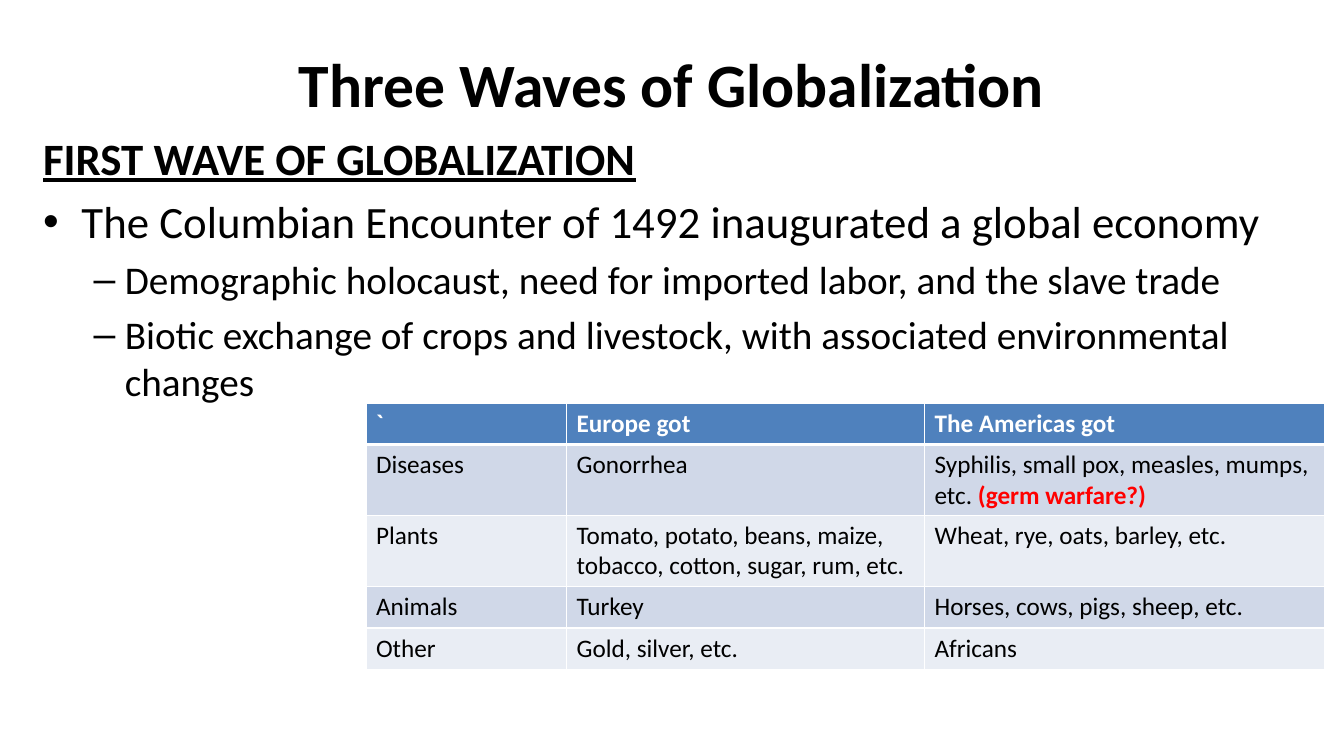
import pptx
import pptx.util
import pptx.dml.color
import pptx.enum.text
import pptx.oxml.ns
from lxml import etree

Inches = pptx.util.Inches
Pt = pptx.util.Pt
FONT = "Calibri"
COLORS = {"black": "000000", "white": "FFFFFF", "red": "FF0000",
          "head": "4F81BD", "dark": "D0D8E8", "light": "E9EDF4"}

# Text, level, bullet, left margin, hanging indent, size
POINTS = [
    ("FIRST WAVE OF GLOBALIZATION", 0, None, 0, 0, 32),
    ("The Columbian Encounter of 1492 inaugurated a global economy",
     0, "•", 0.38, 0.38, 32),
    ("Demographic holocaust, need for imported labor, and the slave trade",
     1, "–", 0.81, 0.31, 28),
    ("Biotic exchange of crops and livestock, with associated environmental changes",
     1, "–", 0.81, 0.31, 28),
]
WIDTHS = [1.99, 3.55, 3.97]
HEIGHTS = [0.41, 0.7, 0.71, 0.41, 0.41]
TRADE = [
    ["`", "Europe got", "The Americas got"],
    ["Diseases", "Gonorrhea", "Syphilis, small pox, measles, mumps, etc. "],
    ["Plants", "Tomato, potato, beans, maize, tobacco, cotton, sugar, rum, etc.",
     "Wheat, rye, oats, barley, etc."],
    ["Animals", "Turkey", "Horses, cows, pigs, sheep, etc."],
    ["Other", "Gold, silver, etc.", "Africans"],
]
GERM = "(germ warfare?)"


def color(name):
    return pptx.dml.color.RGBColor.from_string(COLORS[name])


def add_run(para, text, size, bold=False, tone="black"):
    run = para.add_run()
    run.text = text
    run.font.name = FONT
    run.font.size = Pt(size)
    run.font.bold = bold
    run.font.color.rgb = color(tone)
    return run


def add_frame(slide, box):
    frame = slide.shapes.add_textbox(*map(Inches, box)).text_frame
    frame.word_wrap = True
    return frame


def add_node(parent, tag, **attrs):
    return etree.SubElement(parent, pptx.oxml.ns.qn(tag), **attrs)


def add_title(slide, box):
    frame = add_frame(slide, box)
    frame.vertical_anchor = pptx.enum.text.MSO_ANCHOR.MIDDLE
    para = frame.paragraphs[0]
    para.alignment = pptx.enum.text.PP_ALIGN.CENTER
    add_run(para, "Three Waves of Globalization", 44, True)


def add_points(slide, box):
    frame = add_frame(slide, box)
    frame.margin_right = frame.margin_bottom = 0
    for i, (text, level, mark, left, hang, size) in enumerate(POINTS):
        para = frame.add_paragraph() if i else frame.paragraphs[0]
        para.level = level
        if mark:
            props = para._p.get_or_add_pPr()
            props.set("marL", str(Inches(left)))
            props.set("indent", str(-Inches(hang)))
            add_node(props, "a:buFont", typeface="Arial")
            add_node(props, "a:buChar", char=mark)
        para.space_before = Pt(0.2 * size if i else 0)
        run = add_run(para, text, size, bold=not mark)
        run.font.underline = not mark


def add_edges(cell, widths):
    """Draw white borders of the given point widths: left, right, top, bottom."""
    props = cell._tc.get_or_add_tcPr()
    for side, width in zip("LRTB", widths):
        line = add_node(props, "a:ln" + side, w=str(Pt(width)))
        fill = add_node(line, "a:solidFill")
        add_node(fill, "a:srgbClr", val=COLORS["white"])


def add_trade(slide, box):
    table = slide.shapes.add_table(
        len(TRADE), len(WIDTHS), *map(Inches, box)).table
    for col, width in zip(table.columns, WIDTHS):
        col.width = Inches(width)
    for r, texts in enumerate(TRADE):
        table.rows[r].height = Inches(HEIGHTS[r])
        head = r == 0
        band = "head" if head else "dark" if r % 2 else "light"
        for c, text in enumerate(texts):
            cell = table.cell(r, c)
            add_edges(cell, (1, 1, 3 if r == 1 else 1, 3 if head else 1))
            cell.fill.solid()
            cell.fill.fore_color.rgb = color(band)
            add_run(cell.text_frame.paragraphs[0], text, 18, head,
                    "white" if head else "black")
    add_run(table.cell(1, 2).text_frame.paragraphs[0], GERM, 18, True, "red")


def main():
    deck = pptx.Presentation()
    deck.slide_width = Inches(13.33)
    deck.slide_height = Inches(7.5)
    slide = deck.slides.add_slide(deck.slide_layouts[6])
    add_points(slide, (0.33, 1.25, 12.67, 5.5))
    add_title(slide, (0.33, 0.4, 12.67, 0.85))
    add_trade(slide, (3.63, 4, sum(WIDTHS), sum(HEIGHTS)))
    deck.save("out.pptx")


if __name__ == "__main__":
    main()
